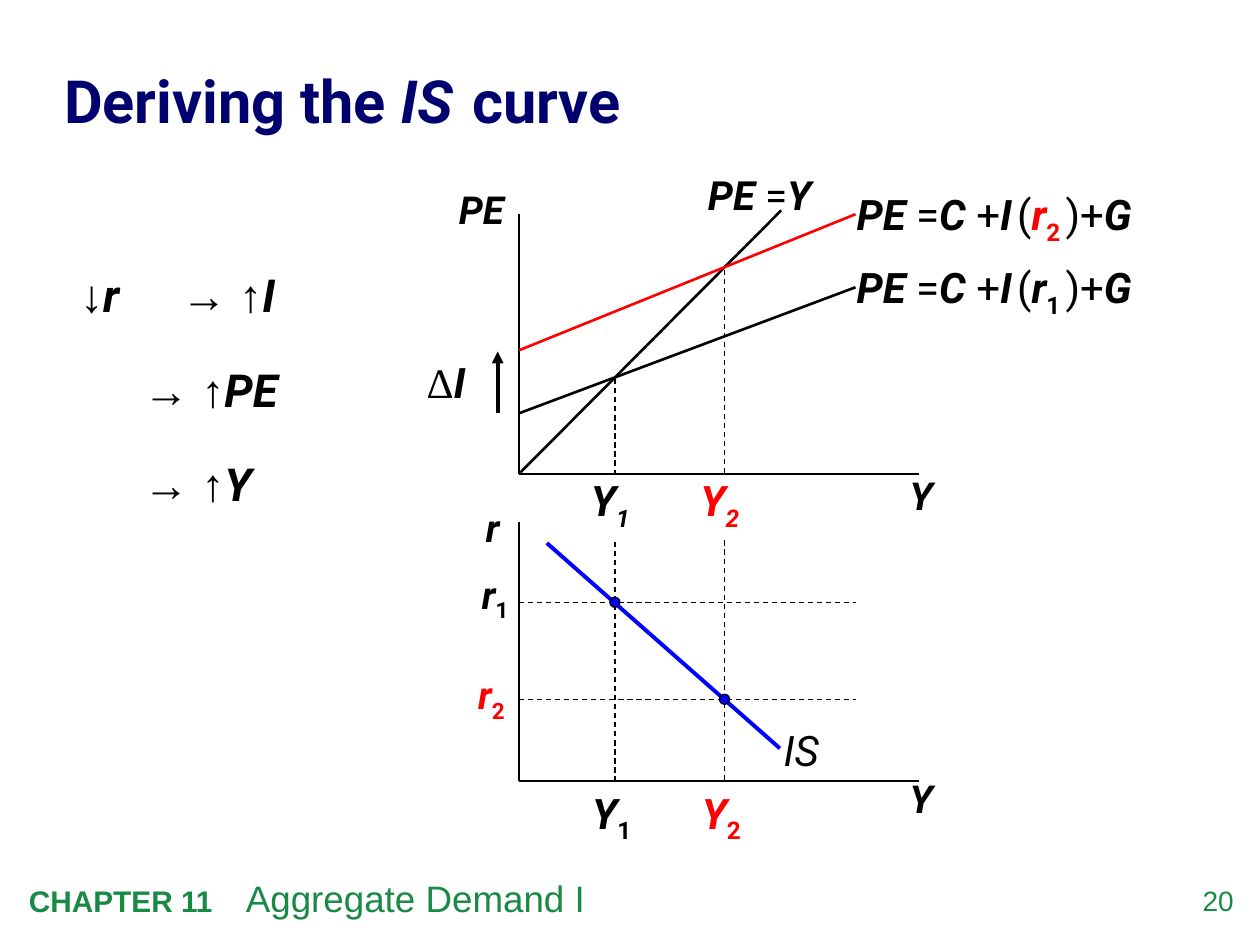
from dataclasses import dataclass
from pptx import Presentation
from pptx.dml.color import RGBColor as Rgb
from pptx.enum.dml import MSO_LINE as Dash
from pptx.enum.shapes import MSO_CONNECTOR as Conn, MSO_SHAPE as Geo
from pptx.enum.text import MSO_ANCHOR as Anchor, MSO_AUTO_SIZE as Auto, PP_ALIGN as Align
from pptx.oxml.ns import qn
from pptx.util import Inches as In, Pt
from lxml.etree import SubElement as Sub


@dataclass
class Theme:
    ink: str = "000000"
    red: str = "FF0000"
    blue: str = "0000FF"
    navy: str = "00006E"
    green: str = "198A46"
    white: str = "FFFFFF"
    head: int = 34
    step: int = 26
    math: int = 24
    eq: int = 23
    axis: int = 22
    font: str = "Roboto"
    sans: str = "Arial"
    serif: str = "Times New Roman"


T = Theme()
# Run styles: "var" is a variable, "op" an operator, "sub" and "isub" subscripts
STYLES = {
    "var": {"bold": True, "italic": True},
    "op": {"bold": False, "italic": False},
    "bold": {"bold": True, "italic": False},
    "slant": {"bold": False, "italic": True},
    "sub": {"bold": True, "italic": False, "base": -25},
    "isub": {"bold": True, "italic": True, "base": -25},
}
PAD = (0.1, 0.05, 0.1, 0.05)
BARE = (0, 0, 0, 0)


class Board:
    def __init__(self, slide):
        self.slide = slide
        self.shapes = slide.shapes

    def runs(self, para, parts, size, ink):
        for words, style, *more in parts:
            look = {"size": size, "name": T.font, "ink": ink, **STYLES[style]}
            look.update(more[0] if more else {})
            run = para.add_run()
            run.text = words
            run.font.color.rgb = Rgb.from_string(look.pop("ink"))
            base = look.pop("base", 0)
            if base:
                run._r.get_or_add_rPr().set("baseline", str(base * 1000))
            look["size"] = Pt(look["size"])
            for key, val in look.items():
                setattr(run.font, key, val)

    def fill(self, shape, ink, alpha=None):
        shape.fill.solid()
        shape.fill.fore_color.rgb = Rgb.from_string(ink)
        if alpha:
            tint = shape.fill._xPr.find(qn("a:solidFill"))[0]
            Sub(tint, qn("a:alpha")).set("val", str(alpha * 1000))

    def frame(self, shape, pad, anchor=Anchor.TOP, grow=False):
        left, top, right, low = map(In, pad)
        look = {"margin_left": left, "margin_top": top, "margin_right": right,
                "margin_bottom": low, "word_wrap": True, "vertical_anchor": anchor,
                "auto_size": Auto.SHAPE_TO_FIT_TEXT if grow else Auto.NONE}
        for key, val in look.items():
            setattr(shape.text_frame, key, val)
        return shape.text_frame.paragraphs[0]

    def title(self, box, parts):
        shape = self.shapes.title
        for key, val in zip(("left", "top", "width", "height"), box):
            setattr(shape, key, In(val))
        para = self.frame(shape, BARE, Anchor.MIDDLE)
        para.alignment, para.line_spacing = Align.LEFT, 1.05
        self.runs(para, parts, T.head, T.navy)

    def text(self, box, parts, size=T.math, ink=T.ink, align=Align.LEFT, pad=PAD):
        shape = self.shapes.add_textbox(*map(In, box))
        para = self.frame(shape, pad, grow=True)
        para.alignment = align
        self.runs(para, parts, size, ink)

    def panel(self, box, parts, size, ink=T.ink, pad=PAD, alpha=None):
        shape = self.shapes.add_shape(Geo.RECTANGLE, *map(In, box))
        shape.shadow.inherit = False
        shape.line.fill.background()
        self.fill(shape, T.white, alpha)
        para = self.frame(shape, pad)
        para.alignment = Align.LEFT
        self.runs(para, parts, size, ink)
        return para

    def step(self, box, parts, hang=0):
        para = self.panel(box, parts, T.step, alpha=50)
        para.line_spacing = 1.1
        props = para._p.get_or_add_pPr()
        props.set("marL", str(In(hang)))
        props.set("indent", str(-In(hang)))
        tab = Sub(Sub(props, qn("a:tabLst")), qn("a:tab"))
        tab.set("pos", str(In(0.76)))
        tab.set("algn", "l")

    def line(self, start, end, width=1, ink=T.ink, dash=False, arrow=False):
        line = self.shapes.add_connector(Conn.STRAIGHT, *map(In, start + end))
        line.line.width = Pt(width)
        line.line.color.rgb = Rgb.from_string(ink)
        if dash:
            line.line.dash_style = Dash.DASH
        if arrow:
            Sub(line.line._get_or_add_ln(), qn("a:tailEnd")).set("type", "triangle")
        Sub(line._element.spPr, qn("a:effectLst"))

    def dot(self, x, y, size=0.08):
        box = (x - size / 2, y - size / 2, size, size)
        dot = self.shapes.add_shape(Geo.OVAL, *map(In, box))
        dot.shadow.inherit = False
        self.fill(dot, T.blue)
        dot.line.color.rgb = Rgb.from_string(T.ink)
        dot.line.width = Pt(0.75)


def main():
    deck = Presentation()
    deck.slide_width, deck.slide_height = In(10), In(7.5)
    board = Board(deck.slides.add_slide(deck.slide_layouts[5]))
    left, right, reach = 4.12, 7.29, 6.79
    sans = {"name": T.sans}

    # Footer and title
    board.text((9.24, 7.01, 0.55, 0.32), [("20", "op", sans)], 16, T.green, Align.RIGHT, BARE)
    board.text((0.13, 6.9, 8.18, 0.45), [("CHAPTER 11    ", "bold", sans),
               ("Aggregate Demand I", "op", {**sans, "size": 21})], 17, T.green)
    board.title((0.51, 0.26, 9.02, 1.03), [("Deriving the ", "bold"), ("IS", "var"),
                (" ", "bold", {"size": 11}), (" curve", "bold")])

    # Output levels: guide lines with a label under each graph
    levels = [("1", 4.88, 3.01, T.ink), ("2", 5.75, 2.14, T.red)]
    for num, x, top, ink in levels:
        board.panel((x - 0.23, 6.2, 0.5, 0.55), [("Y", "var"), (num, "sub")],
                    T.math, ink, (0.05, 0.05, 0.05, 0.1))
        board.line((x, top), (x, 6.2), 0.75, dash=True)
        board.panel((x - 0.24, 3.77, 0.5, 0.5), [("Y", "var"), (num, "isub")],
                    T.math, ink, (0.05, 0, 0.05, 0.1))

    # Chain of effects
    board.step((0.54, 2.03, 2.25, 0.75), [("↓", "op", sans), ("r  \t", "var"),
               ("→ ↑", "op", sans), ("I", "var")], hang=0.3)
    for name, top, high in (("PE", 2.78, 0.92), ("Y", 3.53, 0.83)):
        board.step((0.54, top, 2.25, high),
                   [("\t", "op"), ("→ ↑", "op", sans), (name, "var")])

    # Axes of both graphs
    for name, top, base, box, low in (("PE", 1.7, 3.76, (3.52, 1.43, 0.6, 0.47), 3.7),
                                      ("r", 4.14, 6.2, (3.7, 3.95, 0.42, 0.47), 6.1)):
        board.line((left, top), (left, base))
        board.line((left, base), (right, base))
        board.text((7.12, low, 0.58, 0.47), [("Y", "var")], T.axis)
        board.text(box, [(name, "var")], T.axis, align=Align.CENTER)

    # Spending lines and their equations
    board.line((4.13, 3.75), (6.2, 1.67), 1.5)
    gap = (" ", "var", {"size": 12})
    for num, start, end, top, ink in (("1", 3.28, 2.28, 2.03, T.ink),
                                      ("2", 2.78, 1.7, 1.45, T.red)):
        board.line((left, start), (reach, end), 1.5, ink)
        hue = {"ink": ink}
        board.text((6.7, top, 2.83, 0.5), [
            ("PE ", "var"), ("=", "op"), ("C ", "var"), ("+", "op"), ("I", "var"), gap,
            ("(", "op"), ("r", "var", hue), (num, "sub", hue), gap,
            (")+", "op"), ("G", "var")])
    board.text((5.52, 1.3, 1.3, 0.49), [("PE ", "var"), ("=", "op"), ("Y", "var")], T.eq)

    # Interest rates and the IS curve
    rates = [("1", 3.68, 4.48, 4.78, T.ink), ("2", 3.65, 5.28, 5.55, T.red)]
    for num, x, top, y, ink in rates:
        board.text((x, top, 0.5, 0.47), [("r", "var"), (num, "sub")],
                   T.axis, ink, Align.CENTER)
        board.line((left, y), (reach, y), 0.75, dash=True)
    board.line((4.34, 4.31), (6.19, 5.94), 2.25, T.blue)
    board.text((6.12, 5.7, 0.58, 0.5), [("IS", "slant")])
    for level, rate in zip(levels, rates):
        board.dot(level[1], rate[3])

    # Rise in investment
    board.text((3.21, 2.78, 0.66, 0.5), [("Δ", "op", {"name": T.serif}), ("I", "var")],
               align=Align.CENTER)
    board.line((3.95, 3.28), (3.95, 2.79), 2.25, arrow=True)
    deck.save("out.pptx")


if __name__ == "__main__":
    main()
